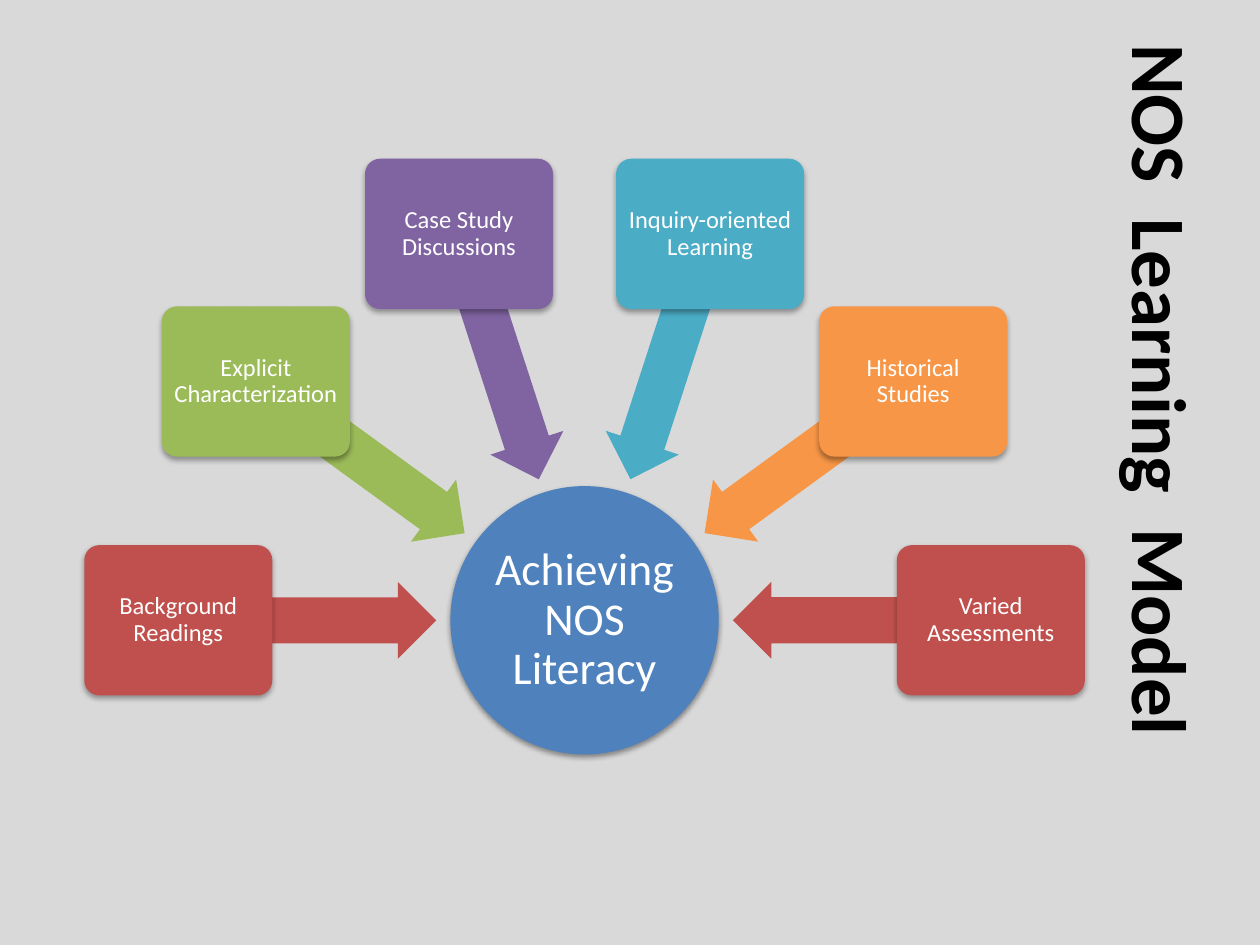
from math import cos, radians, sin

from lxml import etree
from pptx import Presentation
from pptx.dml.color import RGBColor
from pptx.enum.shapes import MSO_SHAPE
from pptx.enum.text import MSO_ANCHOR, MSO_AUTO_SIZE, PP_ALIGN
from pptx.oxml.ns import qn
from pptx.util import Cm, Pt

ARROW = MSO_SHAPE.LEFT_ARROW
CARD = MSO_SHAPE.ROUNDED_RECTANGLE
DISC = MSO_SHAPE.OVAL
MIDDLE = MSO_ANCHOR.MIDDLE
NO_FIT = MSO_AUTO_SIZE.NONE
CENTER = PP_ALIGN.CENTER

GRAY = RGBColor(0xD9, 0xD9, 0xD9)
BLACK = RGBColor(0x00, 0x00, 0x00)
WHITE = RGBColor(0xFF, 0xFF, 0xFF)
BLUE = RGBColor(0x4F, 0x81, 0xBD)
RED = RGBColor(0xC0, 0x50, 0x4D)
GREEN = RGBColor(0x9B, 0xBB, 0x59)
PURPLE = RGBColor(0x80, 0x64, 0xA2)
TEAL = RGBColor(0x4B, 0xAC, 0xC6)
ORANGE = RGBColor(0xF7, 0x96, 0x46)

STEPS = [
    ("Background Readings", RED),
    ("Explicit Characterization", GREEN),
    ("Case Study Discussions", PURPLE),
    ("Inquiry-oriented Learning", TEAL),
    ("Historical\vStudies", ORANGE),
    ("Varied Assessments", RED),
]


def write(shape, text, size, color, bold=False, inset=None, spacing=None):
    frame = shape.text_frame
    frame.word_wrap = True
    frame.auto_size = NO_FIT
    frame.vertical_anchor = MIDDLE
    if inset is not None:
        frame.margin_left = frame.margin_right = Cm(inset)
        frame.margin_top = frame.margin_bottom = Cm(inset)
    frame.text = text
    para = frame.paragraphs[0]
    para.alignment = CENTER
    para.line_spacing = spacing
    font = para.font
    font.name = "Calibri"
    font.size = Pt(size)
    font.bold = bold
    font.color.rgb = color


def shade(shape, alpha, dist):
    effects = shape._element.spPr.find(qn("a:effectLst"))
    outer = etree.SubElement(effects, qn("a:outerShdw"), blurRad=str(Pt(3.1)),
                             dist=str(Pt(dist)), dir="5400000", rotWithShape="0")
    color = etree.SubElement(outer, qn("a:srgbClr"), val=str(BLACK))
    etree.SubElement(color, qn("a:alpha"), val=str(alpha * 1000))


def place(shapes, kind, mid_x, mid_y, w, h, color):
    shape = shapes.add_shape(kind, Cm(mid_x - w / 2), Cm(mid_y - h / 2), Cm(w), Cm(h))
    shape.shadow.inherit = False
    shape.fill.solid()
    shape.fill.fore_color.rgb = color
    shape.line.fill.background()
    return shape


def add_title(slide, x, y, w, h):
    title = slide.shapes.title
    title.left, title.top, title.width, title.height = Cm(x), Cm(y), Cm(w), Cm(h)
    write(title, "NOS  Learning  Model", 44, BLACK, bold=True)
    title.text_frame._txBody.bodyPr.set("vert", "eaVert")


def add_wheel(slide, x, y, w, h):
    shapes = slide.shapes.add_group_shape().shapes
    disc_w, card_w, card_h = 5.41, 3.79, 3.03
    mid_x, mid_y = x + w / 2, y + h - disc_w / 2
    reach = (w - card_w) / 2
    arm = 5.58

    disc = place(shapes, DISC, mid_x, mid_y, disc_w, disc_w, BLUE)
    shade(disc, 38, 1.6)
    write(disc, "Achieving NOS Literacy", 26, WHITE, inset=0.05, spacing=0.9)

    turn = 180 / (len(STEPS) - 1)
    for i, (text, color) in enumerate(STEPS):
        angle = 180 + i * turn
        dx, dy = cos(radians(angle)), sin(radians(angle))
        arrow = place(shapes, ARROW, mid_x + arm * dx, mid_y + arm * dy, 5.18, 1.55, color)
        arrow.adjustments[0] = 0.6
        arrow.adjustments[1] = 0.5
        arrow.rotation = angle % 360
        card = place(shapes, CARD, mid_x + reach * dx, mid_y + reach * dy,
                     card_w, card_h, color)
        card.adjustments[0] = 0.1
        shade(card, 35, 1.8)
        write(card, text, 14, WHITE, inset=0.08, spacing=0.9)


def main():
    deck = Presentation()
    deck.slide_width, deck.slide_height = Cm(25.4), Cm(19.05)
    slide = deck.slides.add_slide(deck.slide_layouts[5])
    slide.background.fill.solid()
    slide.background.fill.fore_color.rgb = GRAY
    add_title(slide, 21.92, 0.76, 3.05, 16.26)
    add_wheel(slide, 1.7, 3.2, 20.17, 12.01)
    deck.save("out.pptx")


if __name__ == "__main__":
    main()
